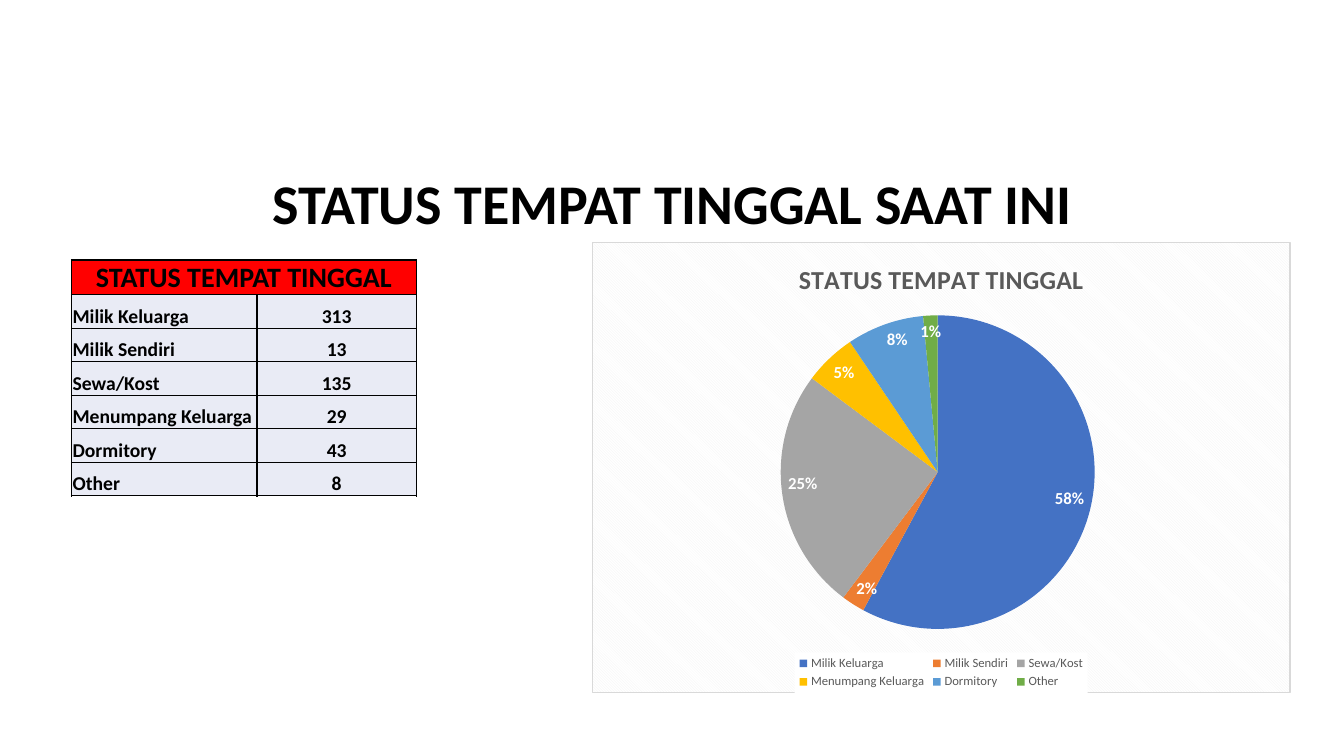
from dataclasses import dataclass

from lxml import etree
from pptx import Presentation
from pptx.chart.data import CategoryChartData
from pptx.dml.color import RGBColor
from pptx.enum.chart import XL_CHART_TYPE, XL_LABEL_POSITION, XL_LEGEND_POSITION
from pptx.enum.text import MSO_ANCHOR, MSO_AUTO_SIZE, PP_ALIGN
from pptx.oxml import parse_xml
from pptx.oxml.ns import nsdecls, qn
from pptx.util import Inches, Pt

LEFT, CENTER = PP_ALIGN.LEFT, PP_ALIGN.CENTER
MIDDLE, BOTTOM, TOP = MSO_ANCHOR.MIDDLE, MSO_ANCHOR.BOTTOM, MSO_ANCHOR.TOP
TITLE_ONLY = 5
SLIDE_WIDTH, SLIDE_HEIGHT = Inches(13.33), Inches(7.5)


@dataclass(frozen=True)
class Theme:
    font: str = "Calibri"
    ink: str = "000000"
    muted: str = "595959"
    white: str = "FFFFFF"
    header: str = "FF0000"
    body: str = "E9EBF5"
    hatch: str = "F2F2F2"
    frame: str = "D9D9D9"
    slices: tuple = ("4472C4", "ED7D31", "A5A5A5", "FFC000", "5B9BD5", "70AD47")
    title_size: float = 40
    header_size: float = 20
    body_size: float = 14
    chart_title_size: float = 18.5
    chart_size: float = 10
    label_size: float = 12
    legend_size: float = 9


THEME = Theme()
TITLE = "STATUS TEMPAT TINGGAL SAAT INI"
SUBJECT = "STATUS TEMPAT TINGGAL"
RESIDENTS = {
    "Milik Keluarga": 313,
    "Milik Sendiri": 13,
    "Sewa/Kost": 135,
    "Menumpang Keluarga": 29,
    "Dormitory": 43,
    "Other": 8,
}


def format_font(font, size, color, bold=False):
    font.name = THEME.font
    font.size = Pt(size)
    font.bold = bold
    font.color.rgb = RGBColor.from_string(color)


def write_text(frame, text, *, size, color=THEME.ink, bold=True, align=CENTER):
    paragraph = frame.paragraphs[0]
    paragraph.alignment = align
    run = paragraph.add_run()
    run.text = text
    format_font(run.font, size, color, bold)


def add_title(slide):
    title = slide.shapes.title
    title.left, title.top = Inches(2), Inches(1.62)
    title.width, title.height = Inches(9.33), Inches(0.77)
    title.text_frame.vertical_anchor = TOP
    title.text_frame.auto_size = MSO_AUTO_SIZE.SHAPE_TO_FIT_TEXT
    write_text(title.text_frame, TITLE, size=THEME.title_size)


# Table
def add_borders(cell):
    properties = cell._tc.get_or_add_tcPr()
    for index, side in enumerate(("lnL", "lnR", "lnT", "lnB")):
        line = etree.Element(qn(f"a:{side}"), w=str(Pt(1)))
        fill = etree.SubElement(line, qn("a:solidFill"))
        etree.SubElement(fill, qn("a:srgbClr"), val=THEME.ink)
        properties.insert(index, line)


def format_cell(cell, text, *, fill, anchor=BOTTOM, **text_format):
    cell.fill.solid()
    cell.fill.fore_color.rgb = RGBColor.from_string(fill)
    cell.vertical_anchor = anchor
    cell.margin_left = cell.margin_right = cell.margin_top = Inches(0.01)
    cell.margin_bottom = 0
    add_borders(cell)
    if text:
        write_text(cell.text_frame, text, **text_format)


def add_status_table(slide):
    row_count = len(RESIDENTS) + 1
    height = Inches(2.33)
    table = slide.shapes.add_table(
        row_count, 2, Inches(0.71), Inches(2.58), Inches(3.42), height).table
    for column, width in zip(table.columns, (1.84, 1.58)):
        column.width = Inches(width)
    for row in table.rows:
        row.height = height // row_count

    table.cell(0, 0).merge(table.cell(0, 1))
    for column, text in enumerate((SUBJECT, "")):
        format_cell(table.cell(0, column), text, fill=THEME.header,
                    anchor=MIDDLE, size=THEME.header_size)
    for row, (status, count) in enumerate(RESIDENTS.items(), start=1):
        for column, (text, align) in enumerate(((status, LEFT), (str(count), CENTER))):
            format_cell(table.cell(row, column), text, fill=THEME.body,
                        size=THEME.body_size, align=align)


# Chart
def manual_layout(inner=False, **shares):
    target = '<c:layoutTarget val="inner"/>' if inner else ""
    modes = '<c:xMode val="edge"/><c:yMode val="edge"/>'
    values = "".join(f'<c:{key} val="{shares[key]}"/>' for key in "xywh")
    return parse_xml(f'<c:layout {nsdecls("c")}><c:manualLayout>{target}{modes}'
                     f'{values}</c:manualLayout></c:layout>')


def area_properties(content):
    return parse_xml(f'<c:spPr {nsdecls("c", "a")}>{content}</c:spPr>')


def solid_fill(color):
    return f'<a:solidFill><a:srgbClr val="{color}"/></a:solidFill>'


def style_chart_area(chart):
    hatch = (f'<a:pattFill prst="dkDnDiag"><a:fgClr><a:srgbClr val="{THEME.hatch}"/></a:fgClr>'
             f'<a:bgClr><a:srgbClr val="{THEME.white}"/></a:bgClr></a:pattFill>')
    border = f'<a:ln w="{Pt(0.75)}">{solid_fill(THEME.frame)}</a:ln>'
    space = chart.element
    space.find(qn("c:txPr")).addprevious(area_properties(hatch + border))
    plot_area = space.find(f'{qn("c:chart")}/{qn("c:plotArea")}')
    for layout in plot_area.findall(qn("c:layout")):
        plot_area.remove(layout)
    plot_area.insert(0, manual_layout(inner=True, x=0.27, y=0.16, w=0.45, h=0.7))


def style_legend(chart):
    chart.has_legend = True
    legend = chart.legend
    legend.position = XL_LEGEND_POSITION.BOTTOM
    legend.include_in_layout = False
    format_font(legend.font, THEME.legend_size, THEME.muted)
    element = legend._element
    for layout in element.findall(qn("c:layout")):
        element.remove(layout)
    element.find(qn("c:legendPos")).addnext(manual_layout(x=0.29, y=0.91, w=0.42, h=0.09))
    element.find(qn("c:txPr")).addprevious(area_properties(solid_fill(THEME.white)))


def style_slices(plot):
    plot.vary_by_categories = True
    for index, color in enumerate(THEME.slices):
        fill = plot.series[0].points[index].format.fill
        fill.solid()
        fill.fore_color.rgb = RGBColor.from_string(color)
    plot.has_data_labels = True
    labels = plot.data_labels
    labels.show_percentage = True
    labels.show_value = False
    labels.number_format = "0%"
    labels.number_format_is_linked = False
    labels.position = XL_LABEL_POSITION.INSIDE_END
    format_font(labels.font, THEME.label_size, THEME.white, bold=True)


def add_status_chart(slide):
    chart_data = CategoryChartData()
    chart_data.categories = list(RESIDENTS)
    chart_data.add_series("Series 1", list(RESIDENTS.values()))
    chart = slide.shapes.add_chart(
        XL_CHART_TYPE.PIE, Inches(5.87), Inches(2.4), Inches(6.93), Inches(4.48),
        chart_data).chart
    format_font(chart.font, THEME.chart_size, THEME.ink)
    chart.has_title = True
    write_text(chart.chart_title.text_frame, SUBJECT,
               size=THEME.chart_title_size, color=THEME.muted)
    chart.chart_title.include_in_layout = False
    style_chart_area(chart)
    style_legend(chart)
    style_slices(chart.plots[0])


def main():
    presentation = Presentation()
    presentation.slide_width, presentation.slide_height = SLIDE_WIDTH, SLIDE_HEIGHT
    slide = presentation.slides.add_slide(presentation.slide_layouts[TITLE_ONLY])
    add_status_table(slide)
    add_title(slide)
    add_status_chart(slide)
    presentation.save("out.pptx")


if __name__ == "__main__":
    main()
